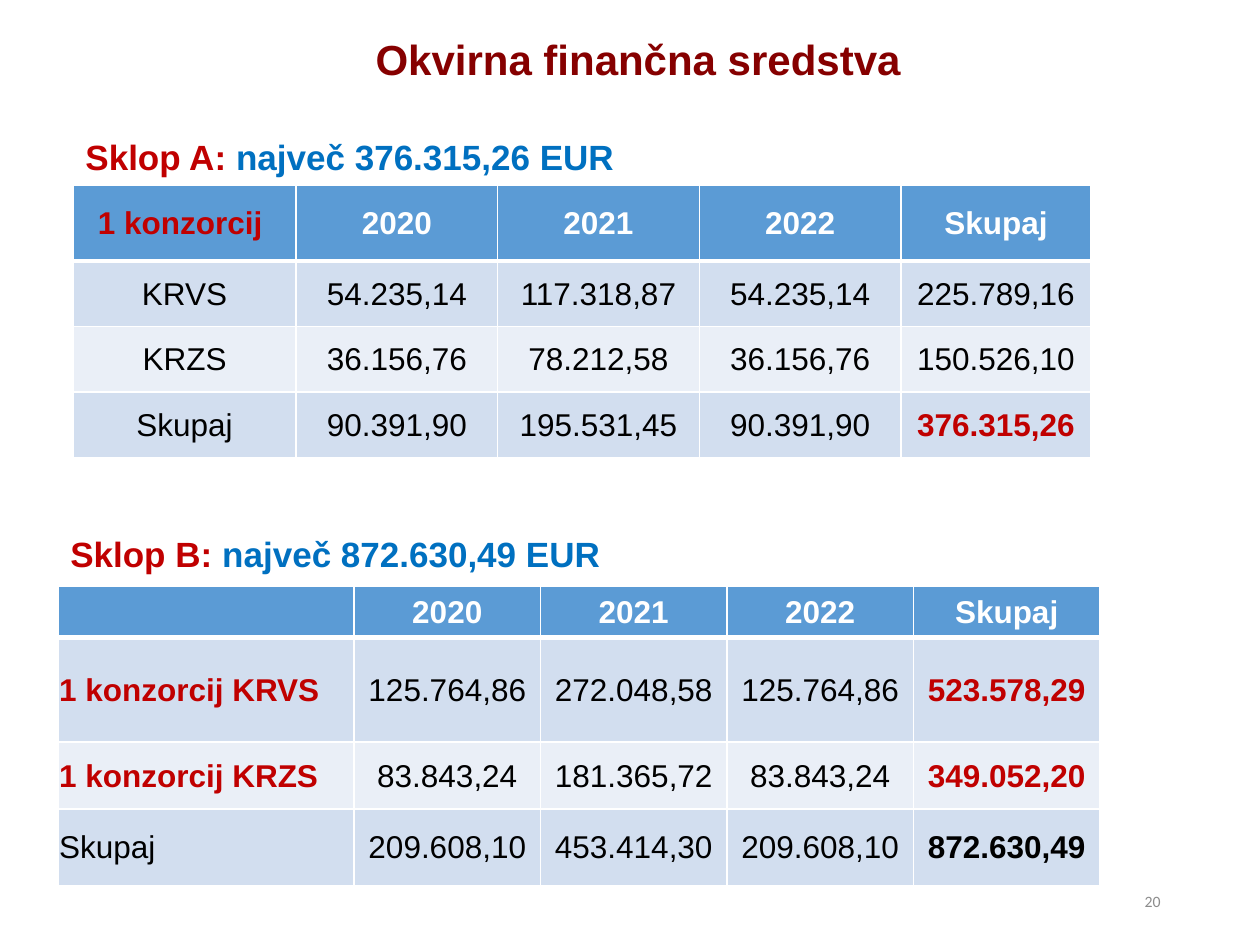
from lxml import etree
from pptx import Presentation
from pptx.dml.color import RGBColor
from pptx.enum import text
from pptx.oxml.ns import qn
from pptx.util import Inches, Pt

RED, BLUE, BLACK, WHITE = "C00000", "0070C0", "000000", "FFFFFF"
HEADER_FILL, BAND_FILLS = "5B9BD5", ("EAEFF7", "D2DEEF")
CENTER, LEFT, RIGHT = text.PP_ALIGN.CENTER, text.PP_ALIGN.LEFT, text.PP_ALIGN.RIGHT


def set_font(font, size, color, bold=False, name="Arial"):
    font.name, font.size, font.bold = name, Pt(size), bold
    font.color.rgb = RGBColor.from_string(color)


def add_border(cell, side, points):
    """Draw a white line on one side of a cell: L, R, T or B."""
    line = etree.SubElement(cell._tc.get_or_add_tcPr(), qn(f"a:ln{side}"), w=str(Pt(points)))
    fill = etree.SubElement(line, qn("a:solidFill"))
    etree.SubElement(fill, qn("a:srgbClr"), val=WHITE)


presentation = Presentation()
presentation.slide_width, presentation.slide_height = Inches(10), Inches(7.5)
slide = presentation.slides.add_slide(presentation.slide_layouts[6])

# Title
title = slide.shapes.add_textbox(Inches(0.58), Inches(0.27), Inches(8.97), Inches(0.57))
frame = title.text_frame
frame.word_wrap = True
frame.margin_left = frame.margin_right = frame.margin_top = frame.margin_bottom = 0
paragraph = frame.paragraphs[0]
paragraph.text = "Okvirna finančna sredstva"
paragraph.alignment = CENTER
set_font(paragraph.runs[0].font, 24, "860000", True)

# Headings above the tables
headings = [
    ("Sklop A:", " največ 376.315,26 EUR", 0.58, 1.03, 9.16),
    ("Sklop B:", " največ 872.630,49 EUR", 0.46, 4.18, 8.64),
]
for label, amount, left, top, width in headings:
    heading = slide.shapes.add_textbox(Inches(left), Inches(top), Inches(width), Inches(0.44))
    heading.text_frame.word_wrap = True
    for part, color in ((label, RED), (amount, BLUE)):
        run = heading.text_frame.paragraphs[0].add_run()
        run.text = part
        set_font(run.font, 20, color, True)

# Tables; red and bold hold the (row, column) of emphasised cells
tables = [
    dict(
        left=0.46, top=4.65, first_alignment=LEFT,
        widths=[2.35] + [1.48] * 4, heights=[0.41, 0.83, 0.53, 0.61],
        red={(1, 0), (2, 0), (1, 4), (2, 4)}, bold={(3, 4)},
        rows=[
            ["", "2020", "2021", "2022", "Skupaj"],
            ["1 konzorcij KRVS", "125.764,86", "272.048,58", "125.764,86", "523.578,29"],
            ["1 konzorcij KRZS", "83.843,24", "181.365,72", "83.843,24", "349.052,20"],
            ["Skupaj", "209.608,10", "453.414,30", "209.608,10", "872.630,49"],
        ],
    ),
    dict(
        left=0.58, top=1.47, first_alignment=CENTER,
        widths=[1.77, 1.6, 1.6, 1.6, 1.51], heights=[0.6] + [0.52] * 3,
        red={(0, 0), (3, 4)}, bold=set(),
        rows=[
            ["1 konzorcij ", "2020", "2021", "2022", "Skupaj"],
            ["KRVS", "54.235,14", "117.318,87", "54.235,14", "225.789,16"],
            ["KRZS", "36.156,76", "78.212,58", "36.156,76", "150.526,10"],
            ["Skupaj", "90.391,90", "195.531,45", "90.391,90", "376.315,26"],
        ],
    ),
]
for data in tables:
    widths, heights = data["widths"], data["heights"]
    table = slide.shapes.add_table(
        len(heights), len(widths), Inches(data["left"]), Inches(data["top"]),
        Inches(sum(widths)), Inches(sum(heights))).table
    for column, width in zip(table.columns, widths):
        column.width = Inches(width)
    for row, height in zip(table.rows, heights):
        row.height = Inches(height)

    for r, values in enumerate(data["rows"]):
        for c, value in enumerate(values):
            cell = table.cell(r, c)
            cell.margin_left = cell.margin_right = cell.margin_top = Inches(0.01)
            cell.margin_bottom = 0
            cell.vertical_anchor = text.MSO_ANCHOR.MIDDLE
            for side in "LRTB":
                under_header = (r, side) in ((0, "B"), (1, "T"))
                add_border(cell, side, 3 if under_header else 1)
            cell.fill.solid()
            cell.fill.fore_color.rgb = RGBColor.from_string(HEADER_FILL if r == 0 else BAND_FILLS[r % 2])

            paragraph = cell.text_frame.paragraphs[0]
            paragraph.text = value
            paragraph.alignment = data["first_alignment"] if c == 0 else CENTER
            is_red = (r, c) in data["red"]
            color = RED if is_red else WHITE if r == 0 else BLACK
            bold = r == 0 or is_red or (r, c) in data["bold"]
            for run in paragraph.runs:
                set_font(run.font, 18, color, bold)

    # Bands are coloured cell by cell: odd rows take the darker one
        table.horz_banding = False

# Slide number
number = slide.shapes.add_textbox(Inches(7.06), Inches(6.95), Inches(2.25), Inches(0.4))
number.text_frame.word_wrap = True
number.text_frame.vertical_anchor = text.MSO_ANCHOR.MIDDLE
paragraph = number.text_frame.paragraphs[0]
paragraph.text = "20"
paragraph.alignment = RIGHT
set_font(paragraph.runs[0].font, 9, "8C8C8C", name="Calibri")

presentation.save("out.pptx")
